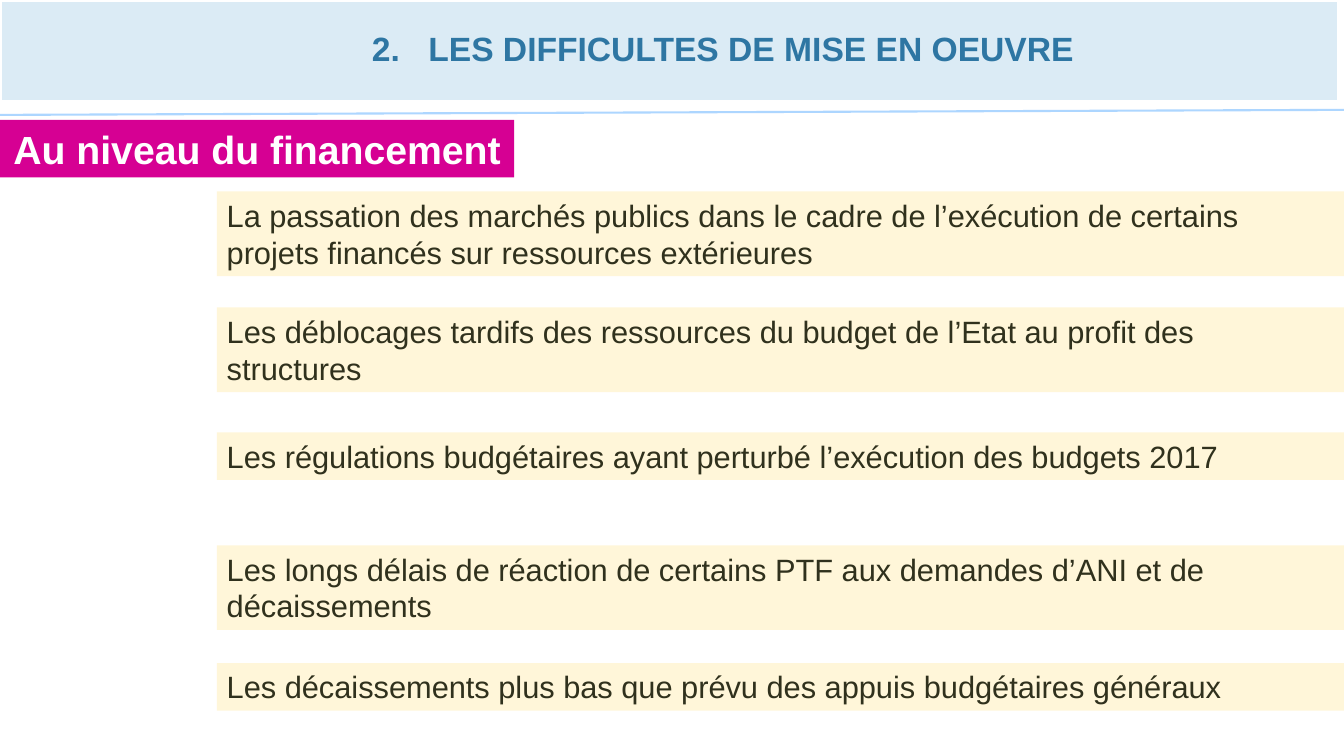
from lxml import etree
from pptx import Presentation
from pptx.dml.color import RGBColor
from pptx.enum import shapes, text
from pptx.oxml import ns
from pptx.util import Inches, Pt

COLORS = {
    "banner": "DBEBF5", "banner_edge": "FFFFFF", "rule": "ADD6FF",
    "title": "2E76A3", "label": "D60093", "label_text": "FFFFFF",
    "item": "FFF6D9", "item_text": "30311D",
}
FONT = "Arial"
PAGE_WIDTH, PAGE_HEIGHT = 13.33, 7.5
ONE_LINE, TWO_LINES = 0.47, 0.84

# Top, height and wording of each difficulty
DIFFICULTIES = [
    (1.9, TWO_LINES, "La passation des marchés publics dans le cadre de l’exécution "
                     "de certains projets financés sur ressources extérieures"),
    (3.05, TWO_LINES, "Les déblocages tardifs des ressources du budget de l’Etat "
                      "au profit des structures"),
    (4.29, ONE_LINE, "Les régulations budgétaires ayant perturbé l’exécution des budgets 2017"),
    (5.41, TWO_LINES, "Les longs délais de réaction de certains PTF aux demandes d’ANI "
                      "et de décaissements"),
    (6.58, ONE_LINE, "Les décaissements plus bas que prévu des appuis budgétaires généraux"),
]


def color(name):
    return RGBColor.from_string(COLORS[name])


def add_panel(page, left, top, width, height, fill):
    panel = page.shapes.add_shape(
        shapes.MSO_SHAPE.RECTANGLE, Inches(left), Inches(top), Inches(width), Inches(height))
    panel.shadow.inherit = False
    panel.fill.solid()
    panel.fill.fore_color.rgb = color(fill)
    panel.line.fill.background()
    return panel


def write(box, wording, size, ink, bold=False, align=text.PP_ALIGN.LEFT,
          anchor=text.MSO_ANCHOR.TOP):
    frame = box.text_frame
    frame.word_wrap = True
    frame.vertical_anchor = anchor
    frame.text = wording
    para = frame.paragraphs[0]
    para.alignment = align
    for span in para.runs:
        span.font.name = FONT
        span.font.size = Pt(size)
        span.font.bold = bold
        span.font.color.rgb = color(ink)
    return para


def number_paragraph(para, start, indent):
    """Give the paragraph an automatic number with a hanging indent."""
    properties = para._p.get_or_add_pPr()
    properties.set("marL", str(Inches(indent)))
    properties.set("indent", str(-Inches(indent)))
    number = etree.SubElement(properties, ns.qn("a:buAutoNum"))
    number.set("type", "arabicPeriod")
    number.set("startAt", str(start))


def add_banner(page, left, top, width, height):
    banner = add_panel(page, left, top, width, height, "banner")
    banner.line.color.rgb = color("banner_edge")
    banner.line.width = Pt(2.25)
    rule = page.shapes.add_connector(
        shapes.MSO_CONNECTOR.STRAIGHT, Inches(left), Inches(top + 1.14),
        Inches(left + PAGE_WIDTH), Inches(top + 1.09))
    rule.line.color.rgb = color("rule")
    rule.line.width = Pt(1.5)
    etree.SubElement(rule._element.spPr, ns.qn("a:effectLst"))


def add_title(page, left, top, width, height):
    box = page.shapes.add_textbox(Inches(left), Inches(top), Inches(width), Inches(height))
    para = write(box, "LES DIFFICULTES DE MISE EN OEUVRE", 24, "title", True,
                 text.PP_ALIGN.CENTER, text.MSO_ANCHOR.MIDDLE)
    number_paragraph(para, start=2, indent=0.56)


def add_label(page, left, top, width, height):
    label = add_panel(page, left, top, width, height, "label")
    write(label, "Au niveau du financement", 28, "label_text", True, text.PP_ALIGN.CENTER)


def add_difficulties(page, left, width):
    for top, height, wording in DIFFICULTIES:
        write(add_panel(page, left, top, width, height, "item"), wording, 22, "item_text")


def main():
    deck = Presentation()
    deck.slide_width, deck.slide_height = Inches(PAGE_WIDTH), Inches(PAGE_HEIGHT)
    page = deck.slides.add_slide(deck.slide_layouts[6])
    add_banner(page, 0, 0, 13.28, 1.01)
    add_difficulties(page, 2.15, PAGE_WIDTH - 2.15)
    add_label(page, 0, 1.19, 5.1, 0.57)
    add_title(page, 1.2, -0.18, 11.94, 1.31)
    deck.save("out.pptx")


if __name__ == "__main__":
    main()
